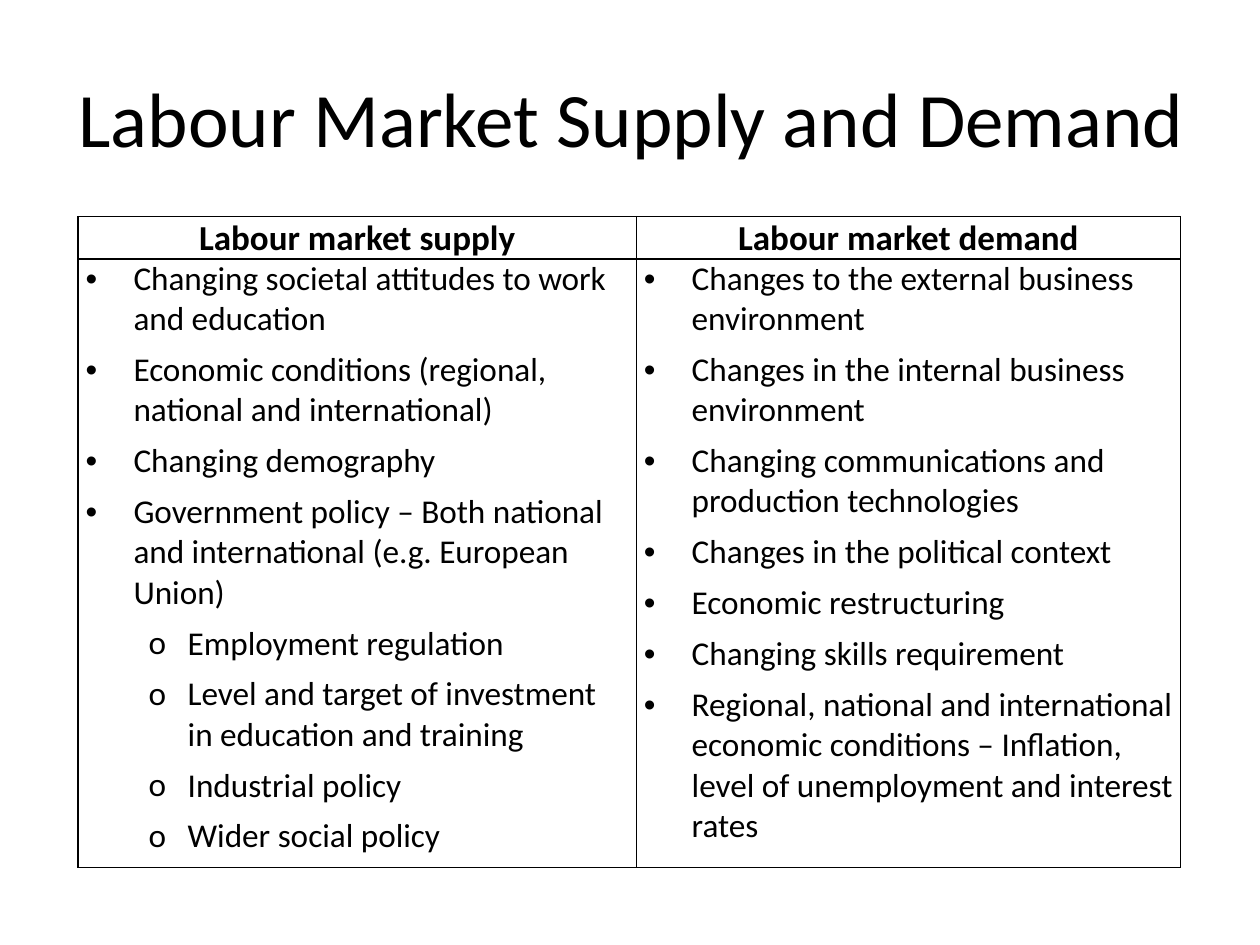
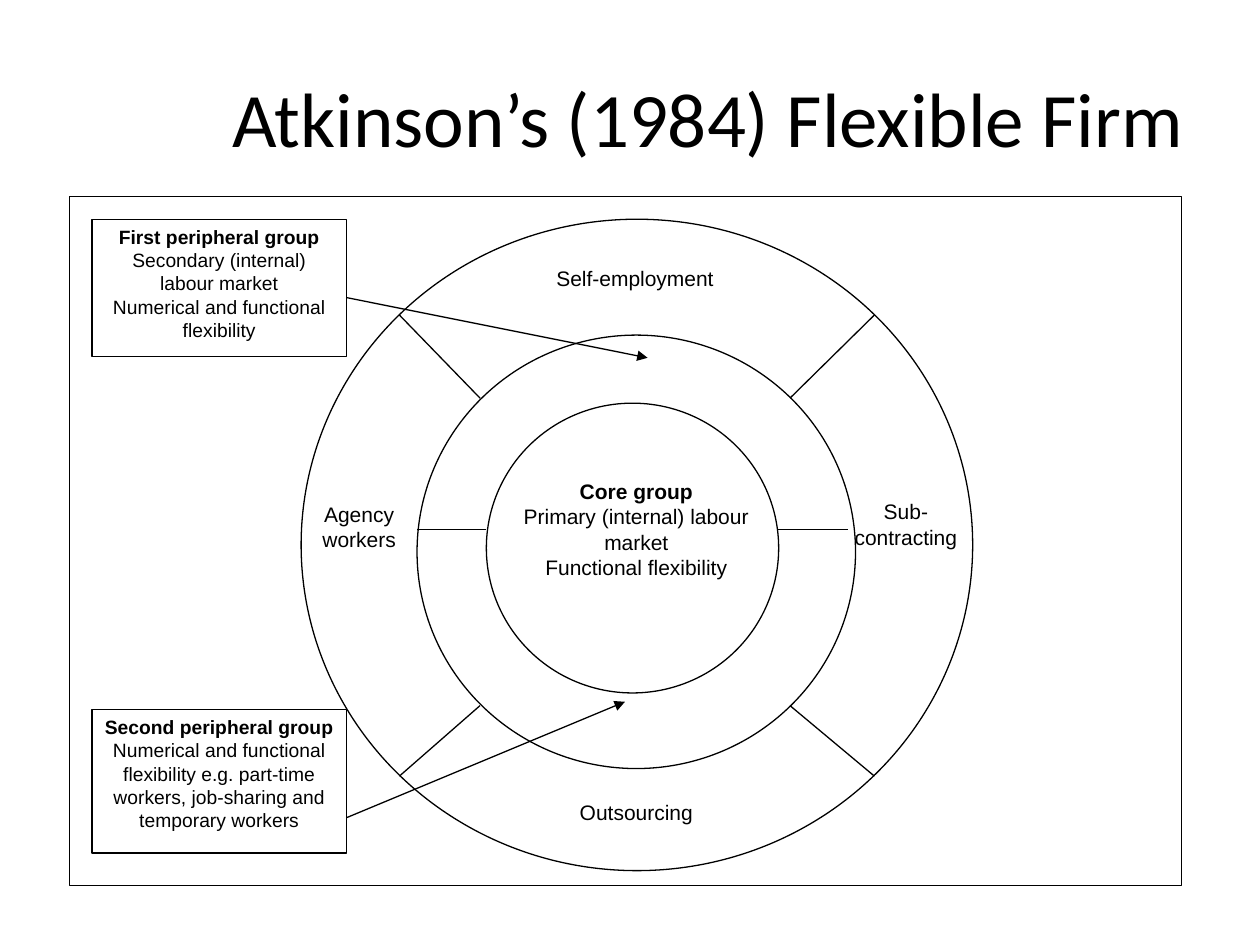
from pptx import Presentation
from pptx.dml.color import RGBColor
from pptx.enum.shapes import MSO_CONNECTOR, MSO_SHAPE
from pptx.enum.text import MSO_ANCHOR, PP_ALIGN
from pptx.oxml.ns import qn
from pptx.util import Inches, Pt
from lxml.etree import SubElement

BLACK = RGBColor(0x00, 0x00, 0x00)
WHITE = RGBColor(0xFF, 0xFF, 0xFF)
TITLE_FONT = "Calibri"
DIAGRAM_FONT = "Arial"
LINE_WIDTH = Pt(0.75)


def write_text(text_frame, lines, size, font=DIAGRAM_FONT, align=PP_ALIGN.CENTER, bold_first=False):
    """Fill a text frame with one paragraph per line, all in one style."""
    text_frame.word_wrap = True
    text_frame.text = "\n".join(lines)
    for index, paragraph in enumerate(text_frame.paragraphs):
        paragraph.alignment = align
        for run in paragraph.runs:
            run.font.name = font
            run.font.size = Pt(size)
            run.font.bold = bold_first and index == 0
            run.font.color.rgb = BLACK


def add_line(slide, start, end, arrow=False):
    points = [Inches(value) for value in (*start, *end)]
    connector = slide.shapes.add_connector(MSO_CONNECTOR.STRAIGHT, *points)
    connector.line.color.rgb = BLACK
    connector.line.width = LINE_WIDTH
    if arrow:
        SubElement(connector.line._get_or_add_ln(), qn("a:tailEnd"), type="triangle")
    SubElement(connector._element.spPr, qn("a:effectLst"))


presentation = Presentation()
presentation.slide_width = Inches(10)
presentation.slide_height = Inches(7.5)

slides = []
for title in ("Labour Market Supply and Demand", "Atkinson’s (1984) Flexible Firm"):
    slide = presentation.slides.add_slide(presentation.slide_layouts[6])
    title_box = slide.shapes.add_textbox(Inches(0.5), Inches(0.3), Inches(9), Inches(1.25))
    write_text(title_box.text_frame, [title], 44, TITLE_FONT, PP_ALIGN.RIGHT)
    title_box.text_frame.vertical_anchor = MSO_ANCHOR.MIDDLE
    slides.append(slide)
market_slide, firm_slide = slides

# Supply and demand table: heading, column width, (level, factor) rows
market_columns = [
    ("Labour market supply", 4.43, [
        (0, "Changing societal attitudes to work and education"),
        (0, "Economic conditions (regional, national and international)"),
        (0, "Changing demography"),
        (0, "Government policy – Both national and international (e.g. European Union)"),
        (1, "Employment regulation"),
        (1, "Level and target of investment in education and training"),
        (1, "Industrial policy"),
        (1, "Wider social policy"),
    ]),
    ("Labour market demand", 4.32, [
        (0, "Changes to the external business environment"),
        (0, "Changes in the internal business environment"),
        (0, "Changing communications and production technologies"),
        (0, "Changes in the political context"),
        (0, "Economic restructuring"),
        (0, "Changing skills requirement"),
        (0, "Regional, national and international economic conditions – Inflation, "
            "level of unemployment and interest rates"),
    ]),
]
# Bullet, its font, left indent and hanging indent for each level
bullet_levels = [("•", "Arial", 0.38, 0.38), ("o", "Calibri", 0.81, 0.31)]

table = market_slide.shapes.add_table(
    2, 2, Inches(0.62), Inches(1.72), Inches(8.75), Inches(5.16)).table
table.first_row = False
table.horz_banding = False
table.rows[0].height = Inches(0.33)
table.rows[1].height = Inches(4.83)

for column, (heading, width, factors) in enumerate(market_columns):
    table.columns[column].width = Inches(width)
    heading_cell, factor_cell = table.cell(0, column), table.cell(1, column)
    write_text(heading_cell.text_frame, [heading], 20, TITLE_FONT, bold_first=True)
    write_text(factor_cell.text_frame, [text for _, text in factors], 19, TITLE_FONT, PP_ALIGN.LEFT)

    for cell in (heading_cell, factor_cell):
        cell.margin_left = cell.margin_right = Inches(0.06)
        cell.margin_top = cell.margin_bottom = 0
        for paragraph in cell.text_frame.paragraphs:
            paragraph.space_before = paragraph.space_after = Pt(3)
        cell_properties = cell._tc.get_or_add_tcPr()
        for side in ("a:lnL", "a:lnR", "a:lnT", "a:lnB"):
            border = SubElement(cell_properties, qn(side), w=str(Pt(1)))
            border_fill = SubElement(border, qn("a:solidFill"))
            SubElement(border_fill, qn("a:srgbClr"), val=str(BLACK))
        cell.fill.solid()
        cell.fill.fore_color.rgb = WHITE

    for paragraph, (level, _) in zip(factor_cell.text_frame.paragraphs, factors):
        bullet, bullet_font, indent, hanging = bullet_levels[level]
        paragraph.level = level
        properties = paragraph._p.get_or_add_pPr()
        properties.set("marL", str(Inches(indent)))
        properties.set("indent", str(-Inches(hanging)))
        SubElement(properties, qn("a:buFont"), typeface=bullet_font)
        SubElement(properties, qn("a:buChar"), char=bullet)

# Flexible firm: frame and rings from the outside in
rings = [
    (MSO_SHAPE.RECTANGLE, 0.55, 1.56, 8.83, 5.47),
    (MSO_SHAPE.OVAL, 2.39, 1.74, 5.33, 5.17),
    (MSO_SHAPE.OVAL, 3.31, 2.66, 3.48, 3.44),
    (MSO_SHAPE.OVAL, 3.86, 3.2, 2.32, 2.3),
]
for kind, *bounds in rings:
    ring = firm_slide.shapes.add_shape(kind, *map(Inches, bounds))
    ring.shadow.inherit = False
    ring.fill.solid()
    ring.fill.fore_color.rgb = WHITE
    ring.line.color.rgb = BLACK
    ring.line.width = LINE_WIDTH

# Dividers between the segments of the rings
for outer_y, inner_y in ((2.5, 3.16), (6.16, 5.6)):
    for outer_x, inner_x in ((3.17, 3.81), (6.94, 6.27)):
        add_line(firm_slide, (outer_x, outer_y), (inner_x, inner_y))
for left, right in ((3.31, 3.86), (6.17, 6.73)):
    add_line(firm_slide, (left, 4.2), (right, 4.2))

# Arrows from the peripheral groups
add_line(firm_slide, (2.39, 2.29), (5.14, 2.84), arrow=True)
add_line(firm_slide, (2.75, 6.49), (4.96, 5.57), arrow=True)

segment_labels = [
    ((4.03, 2.06, 2.02, 0.37), ["Self-employment"]),
    ((4.04, 6.3, 2.02, 0.36), ["Outsourcing"]),
    ((2.39, 3.93, 0.92, 0.92), ["Agency workers"]),
    ((6.64, 3.91, 1.1, 0.55), ["Sub-", "contracting"]),
    ((4.04, 3.75, 2.02, 0.91),
     ["Core group", "Primary (internal) labour market", "Functional flexibility"]),
]
for bounds, lines in segment_labels:
    label = firm_slide.shapes.add_textbox(*map(Inches, bounds))
    write_text(label.text_frame, lines, 12, bold_first=lines[0] == "Core group")

peripheral_groups = [
    (1.74, 1.09, ["First peripheral group", "Secondary (internal) labour market",
                  "Numerical and functional flexibility"]),
    (5.63, 1.14, ["Second peripheral group",
                  "Numerical and functional flexibility e.g. part-time workers, "
                  "job-sharing and temporary workers"]),
]
for top, height, lines in peripheral_groups:
    group_box = firm_slide.shapes.add_textbox(
        Inches(0.73), Inches(top), Inches(2.02), Inches(height))
    group_box.fill.solid()
    group_box.fill.fore_color.rgb = WHITE
    group_box.line.color.rgb = BLACK
    group_box.line.width = LINE_WIDTH
    write_text(group_box.text_frame, lines, 11, bold_first=True)

presentation.save("out.pptx")
